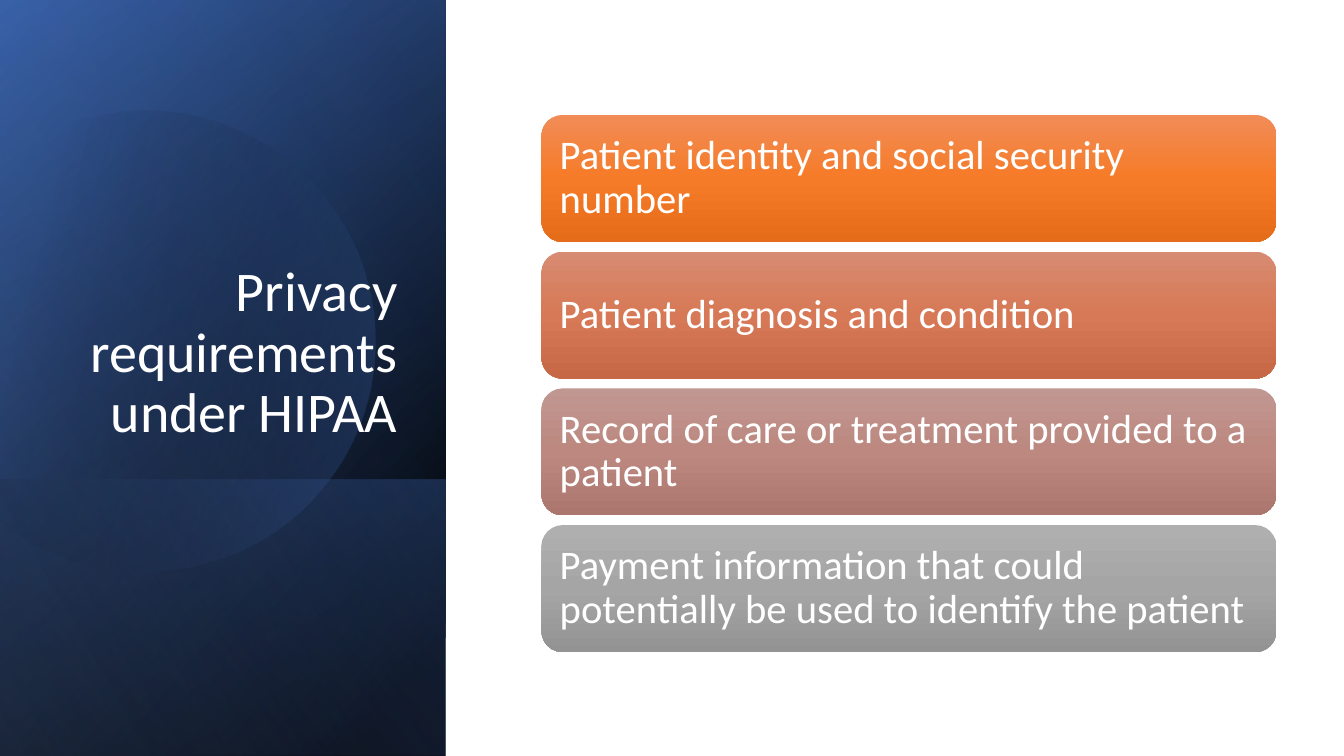
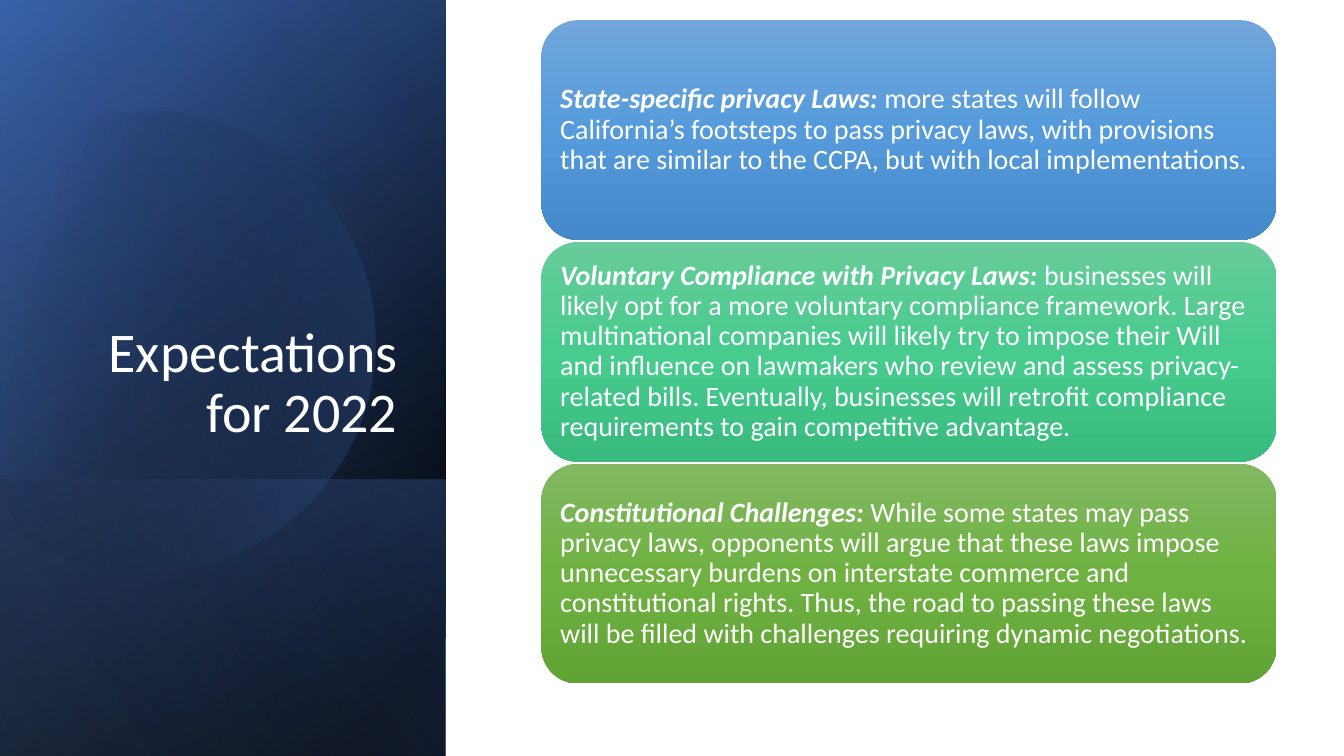
import math

import pptx
import pptx.dml.color
import pptx.enum.shapes
import pptx.enum.text
import pptx.oxml
import pptx.oxml.ns
import pptx.util

Inches = pptx.util.Inches
RGBColor = pptx.dml.color.RGBColor
SHAPES = pptx.enum.shapes.MSO_SHAPE
ALIGN = pptx.enum.text.PP_ALIGN
ANCHOR = pptx.enum.text.MSO_ANCHOR
DRAWING = pptx.oxml.ns.nsdecls("a")

WHITE = RGBColor(0xFF, 0xFF, 0xFF)
BLACK = RGBColor(0x00, 0x00, 0x00)
NAVY = RGBColor(0x2F, 0x55, 0x97)
BLUE = RGBColor(0x44, 0x72, 0xC4)
PALE_BLUE = RGBColor(0x8F, 0xAA, 0xDC)

# Card shades: top, middle, bottom
ORANGE = RGBColor(0xF1, 0x8C, 0x57), RGBColor(0xF6, 0x7B, 0x28), RGBColor(0xE5, 0x6C, 0x19)
TERRACOTTA = RGBColor(0xD7, 0x8B, 0x72), RGBColor(0xD7, 0x79, 0x56), RGBColor(0xC6, 0x68, 0x46)
ROSE = RGBColor(0xC1, 0x97, 0x91), RGBColor(0xBC, 0x88, 0x80), RGBColor(0xAA, 0x76, 0x6E)
GRAY = RGBColor(0xAF, 0xAF, 0xAF), RGBColor(0xA5, 0xA5, 0xA5), RGBColor(0x93, 0x93, 0x93)
SKY = RGBColor(0x71, 0xA6, 0xDB), RGBColor(0x55, 0x9B, 0xDB), RGBColor(0x44, 0x8A, 0xCA)
MINT = RGBColor(0x67, 0xCC, 0x9A), RGBColor(0x47, 0xCB, 0x8E), RGBColor(0x39, 0xBB, 0x7F)
GREEN = RGBColor(0x81, 0xB8, 0x61), RGBColor(0x6F, 0xB2, 0x42), RGBColor(0x62, 0xA3, 0x36)

PANEL_WIDTH = 4.42
SLIDE_HEIGHT = 7.5
LOWER_BAND = 2.74

# Cut disc: frame before turning, turn in degrees, and outline as it lies on the slide.
# A step of one point is a line, a step of three is a curve.
DISC_FRAME = -0.55, 1.06, 4.27, 4.57
DISC_TURN = -16.1
DISC_START = 1.49, 1.1
DISC_STEPS = [
    [(2.46, 1.12), (3.35, 1.77), (3.63, 2.75)],
    [(3.98, 3.97), (3.28, 5.23), (2.07, 5.58)],
    [(1.31, 5.8), (0.53, 5.61), (-0.03, 5.14)],
    [(-0.15, 5.03)],
    [(-0.15, 1.75)],
    [(0, 1.61)],
    [(0.23, 1.42), (0.5, 1.28), (0.8, 1.19)],
    [(1.03, 1.13), (1.26, 1.1), DISC_START],
]


class Deck:
    """Holds the shared style and the current page."""

    font = "Calibri"

    def __init__(self):
        self.deck = pptx.Presentation()
        self.deck.slide_width = Inches(13.33)
        self.deck.slide_height = Inches(SLIDE_HEIGHT)
        self.page = None

    def add_page(self, title):
        self.page = self.deck.slides.add_slide(self.deck.slide_layouts[6])
        self.side_panel()
        self.title(title)

    def gradient(self, shape, stops, angle):
        """Fill with (position %, colour, opacity %) stops, without line or shadow."""
        shape.shadow.inherit = False
        shape.line.fill.background()
        shape.fill.background()
        marks = "".join(
            f'<a:gs pos="{position * 1000}"><a:srgbClr val="{color}">'
            f'<a:alpha val="{opacity * 1000}"/></a:srgbClr></a:gs>'
            for position, color, opacity in stops)
        fill = pptx.oxml.parse_xml(
            f'<a:gradFill {DRAWING} rotWithShape="1"><a:gsLst>{marks}</a:gsLst>'
            f'<a:lin ang="{angle * 60000}" scaled="0"/></a:gradFill>')
        properties = shape._element.spPr
        properties.replace(properties.find(pptx.oxml.ns.qn("a:noFill")), fill)

    def panel_layer(self, height, stops, angle):
        """A turned, mirrored rectangle standing on the bottom of the side panel."""
        left = (PANEL_WIDTH - height) / 2
        top = SLIDE_HEIGHT - (height + PANEL_WIDTH) / 2
        layer = self.page.shapes.add_shape(
            SHAPES.RECTANGLE, Inches(left), Inches(top), Inches(height), Inches(PANEL_WIDTH))
        layer.rotation = 90
        layer._element.spPr.xfrm.set("flipH", "1")
        self.gradient(layer, stops, angle)

    def disc(self, stops, angle):
        """A circle cut straight on its left, with true curves, turned in its frame."""
        left, top, width, height = DISC_FRAME
        turn = math.radians(-DISC_TURN)

        def point_xml(point):
            across = point[0] - left - width / 2
            down = point[1] - top - height / 2
            x = width / 2 + across * math.cos(turn) - down * math.sin(turn)
            y = height / 2 + across * math.sin(turn) + down * math.cos(turn)
            return f'<a:pt x="{Inches(x)}" y="{Inches(y)}"/>'

        outline = f"<a:moveTo>{point_xml(DISC_START)}</a:moveTo>"
        for step in DISC_STEPS:
            tag = "cubicBezTo" if len(step) == 3 else "lnTo"
            outline += f"<a:{tag}>{''.join(map(point_xml, step))}</a:{tag}>"
        curve = pptx.oxml.parse_xml(
            f'<a:path {DRAWING} w="{Inches(width)}" h="{Inches(height)}">'
            f'{outline}<a:close/></a:path>')

        builder = self.page.shapes.build_freeform(Inches(left), Inches(top))
        builder.add_line_segments([(Inches(left + width), Inches(top + height))])
        disc = builder.convert_to_shape()
        disc.left, disc.top, disc.width, disc.height = map(Inches, DISC_FRAME)
        disc.rotation = DISC_TURN
        straight = next(disc._element.spPr.iter(pptx.oxml.ns.qn("a:path")))
        straight.getparent().replace(straight, curve)
        self.gradient(disc, stops, angle)

    def side_panel(self):
        self.panel_layer(SLIDE_HEIGHT, [(8, BLACK, 100), (100, NAVY, 100)], 50)
        self.panel_layer(SLIDE_HEIGHT, [(0, BLACK, 0), (99, BLUE, 46)], 30)
        self.panel_layer(LOWER_BAND, [(2, BLUE, 29), (100, BLACK, 30)], 130)
        self.disc([(29, BLACK, 0), (100, BLUE, 43)], 30)
        self.panel_layer(SLIDE_HEIGHT, [(0, BLACK, 0), (99, PALE_BLUE, 11)], 120)

    def style(self, para, size, align):
        para.alignment = align
        para.line_spacing = 0.9
        for span in para.runs:
            span.font.name = self.font
            span.font.size = pptx.util.Pt(size)
            span.font.color.rgb = WHITE

    def title(self, text):
        box = self.page.shapes.add_textbox(Inches(0.64), Inches(1.84), Inches(3.4), Inches(2.62))
        frame = box.text_frame
        frame.word_wrap = True
        frame.vertical_anchor = ANCHOR.BOTTOM
        para = frame.paragraphs[0]
        para.text = text
        self.style(para, 40, ALIGN.RIGHT)

    def card(self, top, height, shades, lead, text, size, margin):
        card = self.page.shapes.add_shape(
            SHAPES.ROUNDED_RECTANGLE, Inches(5.37), Inches(top), Inches(7.29), Inches(height))
        self.gradient(card, [(at, shade, 100) for at, shade in zip((0, 50, 100), shades)], 90)
        frame = card.text_frame
        frame.word_wrap = True
        frame.vertical_anchor = ANCHOR.MIDDLE
        frame.margin_left = frame.margin_right = Inches(margin)
        frame.margin_top = frame.margin_bottom = Inches(margin)
        para = frame.paragraphs[0]
        if lead:
            span = para.add_run()
            span.text = lead
            span.font.bold = span.font.italic = True
        para.add_run().text = text
        self.style(para, size, ALIGN.LEFT)

    def card_stack(self, top, bottom, height, cards, size, margin):
        """Cards of one height, spread evenly from top to bottom."""
        pitch = (bottom - top - height) / (len(cards) - 1)
        for index, (shades, lead, text) in enumerate(cards):
            self.card(top + index * pitch, height, shades, lead, text, size, margin)


def main():
    deck = Deck()

    # Privacy requirements
    deck.add_page("Privacy requirements under HIPAA")
    deck.card_stack(1.14, 6.47, 1.26, [
        (ORANGE, "", "Patient identity and social security number"),
        (TERRACOTTA, "", "Patient diagnosis and condition"),
        (ROSE, "", "Record of care or treatment provided to a patient"),
        (GRAY, "", "Payment information that could potentially be used to identify the patient"),
    ], size=29, margin=0.12)

    # Expectations
    deck.add_page("Expectations\nfor 2022")
    deck.card_stack(0.2, 6.78, 2.18, [
        (SKY, "State-specific privacy Laws: ",
         "more states will follow California’s footsteps to pass privacy laws, with "
         "provisions that are similar to the CCPA, but with local implementations."),
        (MINT, "Voluntary Compliance with Privacy Laws:",
         " businesses will likely opt for a more voluntary compliance framework. Large "
         "multinational companies will likely try to impose their Will and influence on "
         "lawmakers who review and assess privacy-related bills. Eventually, businesses "
         "will retrofit compliance requirements to gain competitive advantage."),
        (GREEN, "Constitutional Challenges:",
         " While some states may pass privacy laws, opponents will argue that these laws "
         "impose unnecessary burdens on interstate commerce and constitutional rights. "
         "Thus, the road to passing these laws will be filled with challenges requiring "
         "dynamic negotiations."),
    ], size=20, margin=0.08)

    deck.deck.save("out.pptx")


if __name__ == "__main__":
    main()
